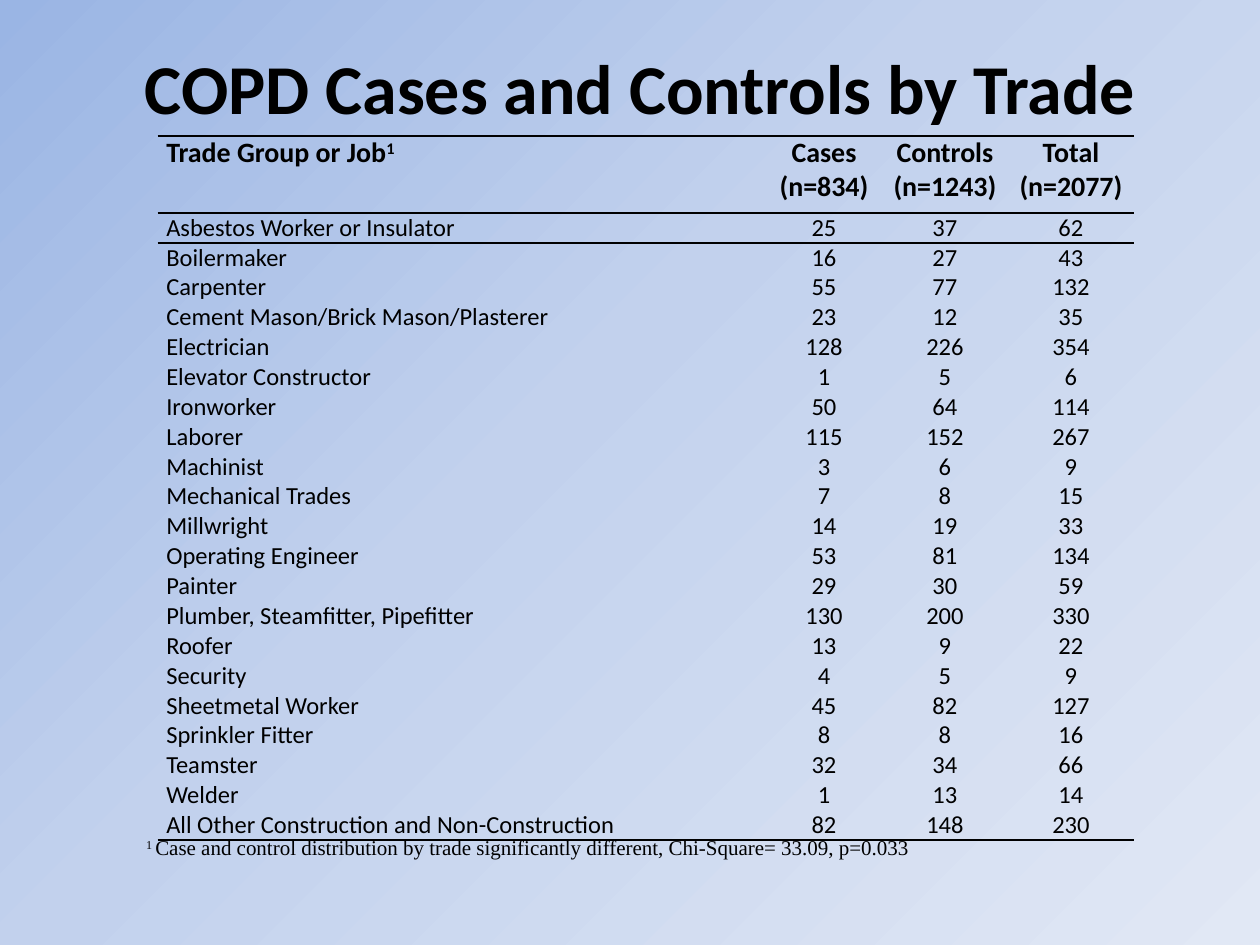
from copy import deepcopy
from dataclasses import dataclass

from lxml.etree import SubElement
from pptx import Presentation
from pptx.dml.color import RGBColor as Color
from pptx.enum.text import MSO_ANCHOR as Anchor, PP_ALIGN as Align
from pptx.oxml.ns import qn
from pptx.util import Inches, Pt


@dataclass(frozen=True)
class Theme:
    ink: str = "000000"
    gradient: tuple = ((0, "9AB5E4"), (0.44, "C2D1ED"), (1, "E1E8F5"))
    main_font: str = "Calibri"
    note_font: str = "Times New Roman"
    title_size: int = 40
    header_size: int = 16
    body_size: int = 14
    note_size: int = 12
    rule_width: int = 1


THEME = Theme()
WIDTH, HEIGHT = Inches(10), Inches(7.5)
COLUMN_WIDTHS = (4.83, 0.92, 1, 1)
HEADER_HEIGHT, ROW_HEIGHT = 0.61, 0.22
NO_STYLE_NO_GRID = "{2D5ABB26-0587-4C30-8999-92F81FD0307C}"

TITLE = "COPD Cases and Controls by Trade"
NOTE = "Case and control distribution by trade significantly different, Chi-Square= 33.09, p=0.033"
HEADERS = ("Trade Group or Job", "Cases\n(n=834)", "Controls\n(n=1243)", "Total\n(n=2077)")
TRADES = (
    ("Asbestos Worker or Insulator", 25, 37, 62),
    ("Boilermaker", 16, 27, 43),
    ("Carpenter", 55, 77, 132),
    ("Cement Mason/Brick Mason/Plasterer", 23, 12, 35),
    ("Electrician", 128, 226, 354),
    ("Elevator Constructor", 1, 5, 6),
    ("Ironworker", 50, 64, 114),
    ("Laborer", 115, 152, 267),
    ("Machinist", 3, 6, 9),
    ("Mechanical Trades", 7, 8, 15),
    ("Millwright", 14, 19, 33),
    ("Operating Engineer", 53, 81, 134),
    ("Painter", 29, 30, 59),
    ("Plumber, Steamfitter, Pipefitter", 130, 200, 330),
    ("Roofer", 13, 9, 22),
    ("Security", 4, 5, 9),
    ("Sheetmetal Worker", 45, 82, 127),
    ("Sprinkler Fitter", 8, 8, 16),
    ("Teamster", 32, 34, 66),
    ("Welder", 1, 13, 14),
    ("All Other Construction and Non-Construction", 82, 148, 230),
)


def paint_background(slide):
    fill = slide.background.fill
    fill.gradient()
    fill.gradient_angle = 315
    stop_list = next(slide.element.iter(qn("a:gsLst")))
    stop_list.append(deepcopy(stop_list[-1]))
    for stop, (position, color) in zip(fill.gradient_stops, THEME.gradient):
        stop.position = position
        stop.color.rgb = Color.from_string(color)


def style_paragraph(paragraph, size, font=THEME.main_font, bold=False, align=Align.LEFT):
    paragraph.alignment = align
    paragraph.font.name = font
    paragraph.font.size = Pt(size)
    paragraph.font.bold = bold
    paragraph.font.color.rgb = Color.from_string(THEME.ink)


def add_superscript(paragraph, text):
    run = paragraph.add_run()
    run.text = text
    run.font._element.set("baseline", "30000")


def add_text_box(slide, left, top, width, height):
    box = slide.shapes.add_textbox(
        int(left * WIDTH), int(top * HEIGHT), int(width * WIDTH), int(height * HEIGHT)
    )
    box.text_frame.word_wrap = True
    return box.text_frame


def add_title(slide):
    frame = add_text_box(slide, 0.058, 0.035, 0.9, 0.1)
    frame.vertical_anchor = Anchor.MIDDLE
    paragraph = frame.paragraphs[0]
    paragraph.text = TITLE
    paragraph.line_spacing = 1.15
    paragraph.space_after = Pt(10)
    style_paragraph(paragraph, THEME.title_size, bold=True, align=Align.CENTER)


def add_note(slide):
    frame = add_text_box(slide, 0.1, 0.867, 0.692, 0.068)
    frame.margin_left = Inches(0.16)
    frame.margin_top = Inches(0.12)
    paragraph = frame.paragraphs[0]
    add_superscript(paragraph, "1 ")
    paragraph.add_run().text = NOTE
    style_paragraph(paragraph, THEME.note_size, THEME.note_font)


def add_rule(cell, edge):
    line = SubElement(cell._tc.get_or_add_tcPr(), qn(f"a:{edge}"), w=str(Pt(THEME.rule_width)))
    SubElement(SubElement(line, qn("a:solidFill")), qn("a:srgbClr"), val=THEME.ink)


def fill_cell(cell, value, column, is_header, edges):
    cell.margin_left = cell.margin_right = Inches(0.07)
    cell.margin_top = cell.margin_bottom = 0
    cell.text = str(value)
    for edge in edges:
        add_rule(cell, edge)
    cell.fill.background()
    size = THEME.header_size if is_header else THEME.body_size
    align = Align.CENTER if column else Align.LEFT
    for paragraph in cell.text_frame.paragraphs:
        style_paragraph(paragraph, size, bold=is_header, align=align)


def add_trade_table(slide):
    rows = (HEADERS, *TRADES)
    height = HEADER_HEIGHT + ROW_HEIGHT * len(TRADES)
    frame = slide.shapes.add_table(
        len(rows), len(HEADERS), int(0.125 * WIDTH), int(0.144 * HEIGHT),
        Inches(sum(COLUMN_WIDTHS)), Inches(height),
    )
    next(frame.element.iter(qn("a:tableStyleId"))).text = NO_STYLE_NO_GRID
    table = frame.table
    table.first_row = table.horz_banding = False
    for column, width in zip(table.columns, COLUMN_WIDTHS):
        column.width = Inches(width)
    row_edges = {0: ("lnT", "lnB"), 1: ("lnT",), len(TRADES): ("lnB",)}
    for index, values in enumerate(rows):
        table.rows[index].height = Inches(ROW_HEIGHT if index else HEADER_HEIGHT)
        for column, value in enumerate(values):
            fill_cell(table.cell(index, column), value, column, index == 0, row_edges.get(index, ()))
    add_superscript(table.cell(0, 0).text_frame.paragraphs[0], "1")


def main():
    presentation = Presentation()
    presentation.slide_width, presentation.slide_height = WIDTH, HEIGHT
    slide = presentation.slides.add_slide(presentation.slide_layouts[6])
    paint_background(slide)
    add_trade_table(slide)
    add_note(slide)
    add_title(slide)
    presentation.save("out.pptx")


if __name__ == "__main__":
    main()
